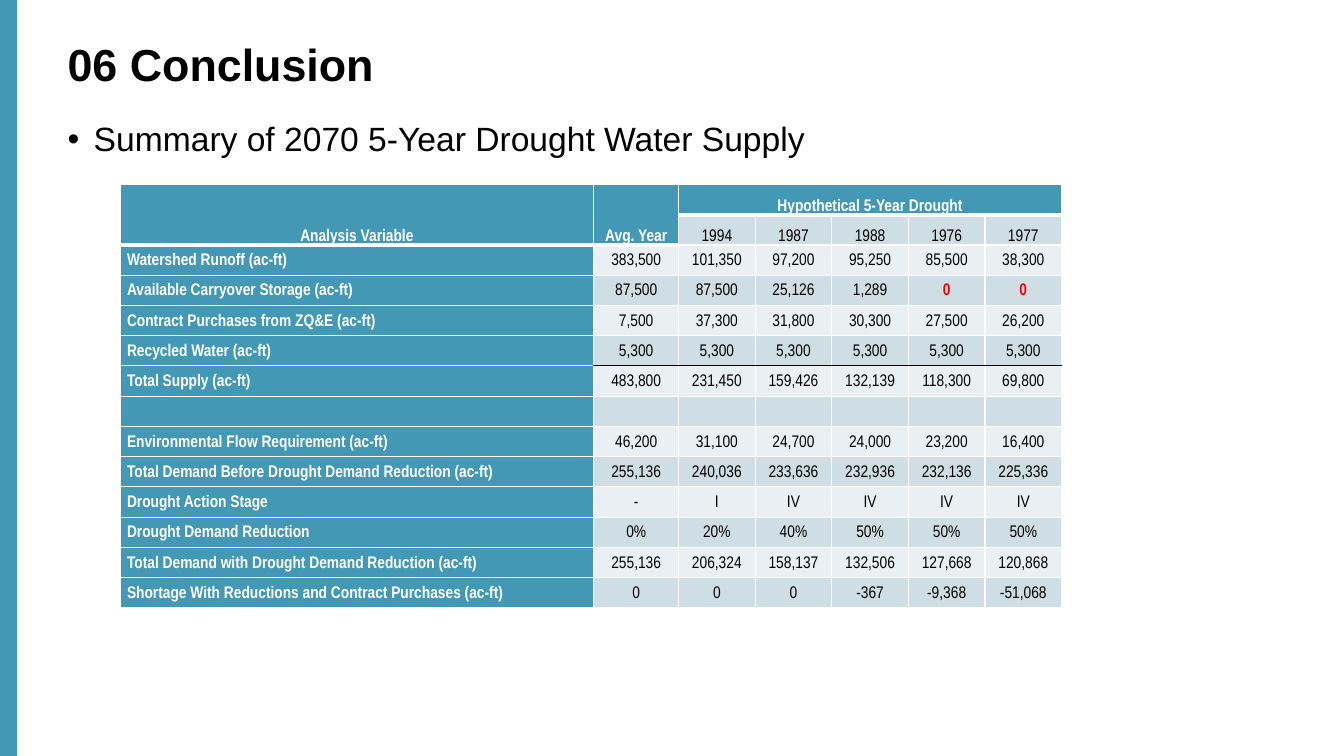
from lxml import etree
from pptx import Presentation
from pptx import util as u
from pptx.dml.color import RGBColor
from pptx.enum import shapes, text
from pptx.oxml import ns

COLORS = {"teal": "4298B5", "band": "CFDDE5", "light": "E9EFF3",
          "white": "FFFFFF", "black": "000000", "red": "FF0000"}

HEADER = [["Analysis Variable", "Avg. Year", "Hypothetical 5-Year Drought", "", "", "", ""],
          ["", "", "1994", "1987", "1988", "1976", "1977"]]
BODY = [
    ["Watershed Runoff (ac-ft)", "383,500", "101,350", "97,200", "95,250", "85,500", "38,300"],
    ["Available Carryover Storage (ac-ft)", "87,500", "87,500", "25,126", "1,289", "0", "0"],
    ["Contract Purchases from ZQ&E (ac-ft)", "7,500", "37,300", "31,800", "30,300", "27,500", "26,200"],
    ["Recycled Water (ac-ft)"] + ["5,300"] * 6,
    ["Total Supply (ac-ft)", "483,800", "231,450", "159,426", "132,139", "118,300", "69,800"],
    [""] * 7,
    ["Environmental Flow Requirement (ac-ft)", "46,200", "31,100", "24,700", "24,000", "23,200", "16,400"],
    ["Total Demand Before Drought Demand Reduction (ac-ft)",
     "255,136", "240,036", "233,636", "232,936", "232,136", "225,336"],
    ["Drought Action Stage", "-", "I", "IV", "IV", "IV", "IV"],
    ["Drought Demand Reduction", "0%", "20%", "40%", "50%", "50%", "50%"],
    ["Total Demand with Drought Demand Reduction (ac-ft)",
     "255,136", "206,324", "158,137", "132,506", "127,668", "120,868"],
    ["Shortage With Reductions and Contract Purchases (ac-ft)",
     "0", "0", "0", "-367", "-9,368", "-51,068"],
]
ROWS = HEADER + BODY
COL_WIDTHS = [4.7, 0.84] + [0.76] * 5
ROW_HEIGHT = 0.3
STORAGE_ROW, RECYCLED_ROW, TOTAL_ROW = 3, 5, 6


def rgb(name):
    return RGBColor.from_string(COLORS[name])


def write(p, words, size=12, font="Arial", color="black", bold=False,
          align=text.PP_ALIGN.LEFT, spacing=0.9):
    p.alignment = align
    p.line_spacing = spacing
    r = p.add_run()
    r.text = words
    r.font.size = u.Pt(size)
    r.font.name = font
    r.font.bold = bold
    r.font.color.rgb = rgb(color)


class ConclusionSlide:
    def __init__(self, prs):
        self.s = prs.slides.add_slide(prs.slide_layouts[5])

    def frame(self, sp):
        tf = sp.text_frame
        tf.word_wrap = True
        tf.auto_size = text.MSO_AUTO_SIZE.NONE
        tf.vertical_anchor = text.MSO_ANCHOR.TOP
        tf.margin_left = tf.margin_right = tf.margin_top = tf.margin_bottom = 0
        return tf

    def bar(self, x, y, w, h):
        sp = self.s.shapes.add_shape(shapes.MSO_SHAPE.RECTANGLE, *map(u.Inches, (x, y, w, h)))
        sp.shadow.inherit = False
        sp.fill.solid()
        sp.fill.fore_color.rgb = rgb("teal")
        sp.line.fill.background()

    def title(self, words, x, y, w, h):
        sp = self.s.shapes.title
        sp.left, sp.top, sp.width, sp.height = map(u.Inches, (x, y, w, h))
        write(self.frame(sp).paragraphs[0], words, size=32, bold=True)

    def bullet(self, words, x, y, w, h):
        sp = self.s.shapes.add_textbox(*map(u.Inches, (x, y, w, h)))
        p = self.frame(sp).paragraphs[0]
        write(p, words, size=24)
        p.space_before, p.space_after = u.Pt(12), u.Pt(6)
        pPr = p._p.get_or_add_pPr()
        indent = u.Inches(0.26)
        pPr.set("marL", str(indent))
        pPr.set("indent", str(-indent))
        etree.SubElement(pPr, ns.qn("a:buFont")).set("typeface", "Arial")
        etree.SubElement(pPr, ns.qn("a:buChar")).set("char", "•")

    def borders(self, cell, top, bottom):
        tcPr = cell._tc.get_or_add_tcPr()
        edges = {"L": ("white", 1), "R": ("white", 1), "T": top, "B": bottom}
        for i, (side, (color, width)) in enumerate(edges.items()):
            ln = etree.Element(ns.qn(f"a:ln{side}"), w=str(u.Pt(width)))
            fill = etree.SubElement(ln, ns.qn("a:solidFill"))
            etree.SubElement(fill, ns.qn("a:srgbClr")).set("val", COLORS[color])
            tcPr.insert(i, ln)

    def cell(self, cell, words, row, col):
        is_head = row == 0 or (row == 1 and col < 2)
        is_label = is_head or col == 0
        is_red = row == STORAGE_ROW and words == "0"
        cell.margin_left = cell.margin_right = u.Inches(0.07)
        cell.margin_top = cell.margin_bottom = 0
        cell.vertical_anchor = text.MSO_ANCHOR.BOTTOM if row < 2 else text.MSO_ANCHOR.MIDDLE
        cell.fill.solid()
        cell.fill.fore_color.rgb = rgb("teal" if is_label else "band" if row % 2 else "light")
        left = col == 0 and not is_head
        write(cell.text_frame.paragraphs[0], words, font="Arial Narrow",
              color="white" if is_label else "red" if is_red else "black",
              bold=is_label or is_red, spacing=1.15,
              align=text.PP_ALIGN.LEFT if left else text.PP_ALIGN.CENTER)
        thin, thick, rule = ("white", 1), ("white", 3), ("black", 1)
        under_head = (row == 1 and col >= 2) or (row == 2 and col < 2)
        top = thick if under_head else rule if row == TOTAL_ROW and col else thin
        bottom = thick if is_head else rule if row == RECYCLED_ROW and col else thin
        self.borders(cell, top, bottom)

    def table(self, x, y):
        size = sum(COL_WIDTHS), ROW_HEIGHT * len(ROWS)
        tbl = self.s.shapes.add_table(len(ROWS), len(COL_WIDTHS),
                                      *map(u.Inches, (x, y, *size))).table
        tbl.first_row = tbl.horz_banding = False
        for column, width in zip(tbl.columns, COL_WIDTHS):
            column.width = u.Inches(width)
        for i, row in enumerate(ROWS):
            tbl.rows[i].height = u.Inches(ROW_HEIGHT)
            for j, words in enumerate(row):
                self.cell(tbl.cell(i, j), words, i, j)
        for start, end in [((0, 0), (1, 0)), ((0, 1), (1, 1)), ((0, 2), (0, 6))]:
            tbl.cell(*start).merge(tbl.cell(*end))


def main():
    prs = Presentation()
    prs.slide_width, prs.slide_height = u.Inches(13.33), u.Inches(7.5)
    slide = ConclusionSlide(prs)
    slide.bar(0, 0, 0.17, 7.5)
    slide.title("06 Conclusion", 0.67, 0.42, 12, 0.65)
    slide.bullet("Summary of 2070 5-Year Drought Water Supply", 0.67, 1.22, 12, 5.33)
    slide.table(1.19, 1.83)
    prs.save("out.pptx")


if __name__ == "__main__":
    main()
